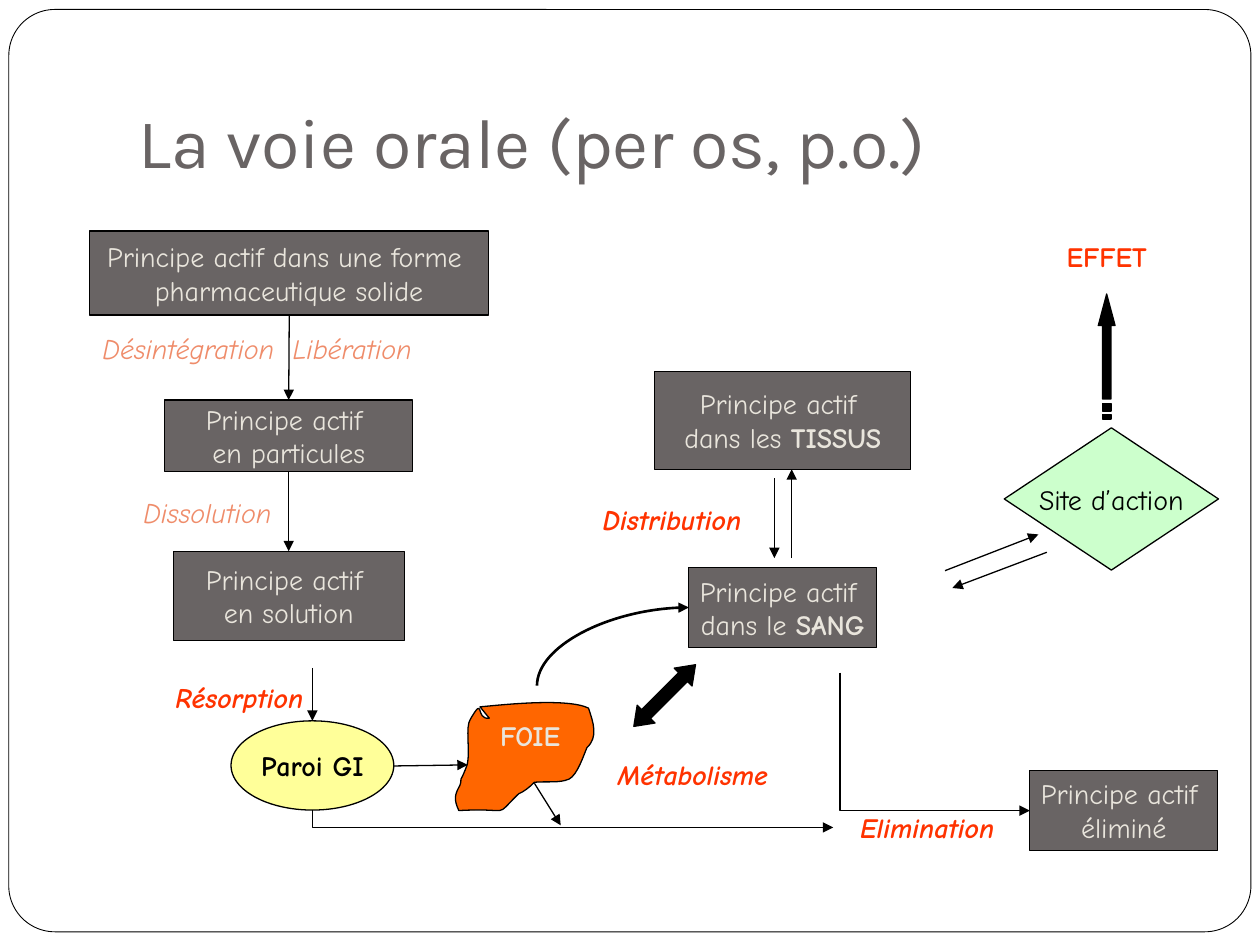
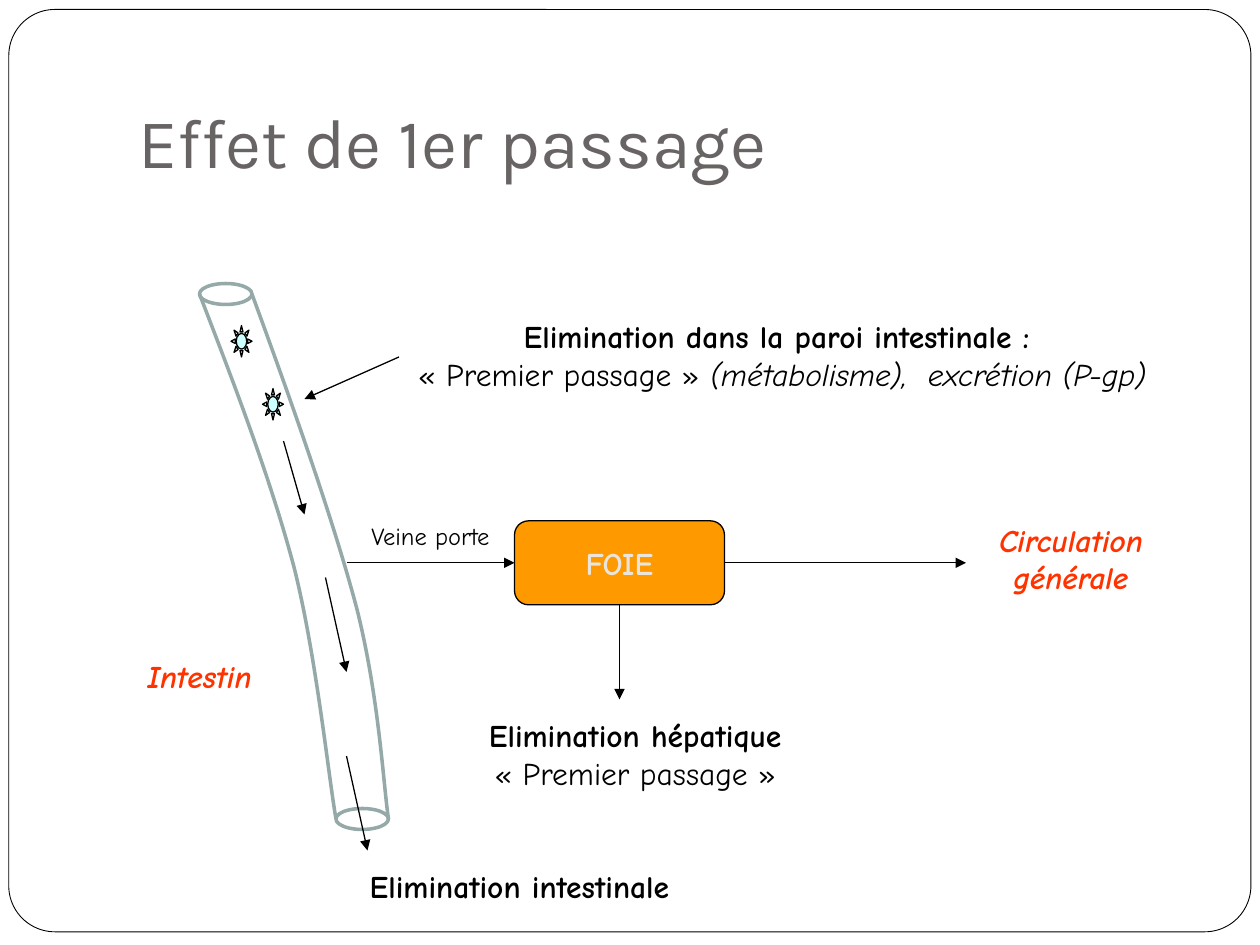
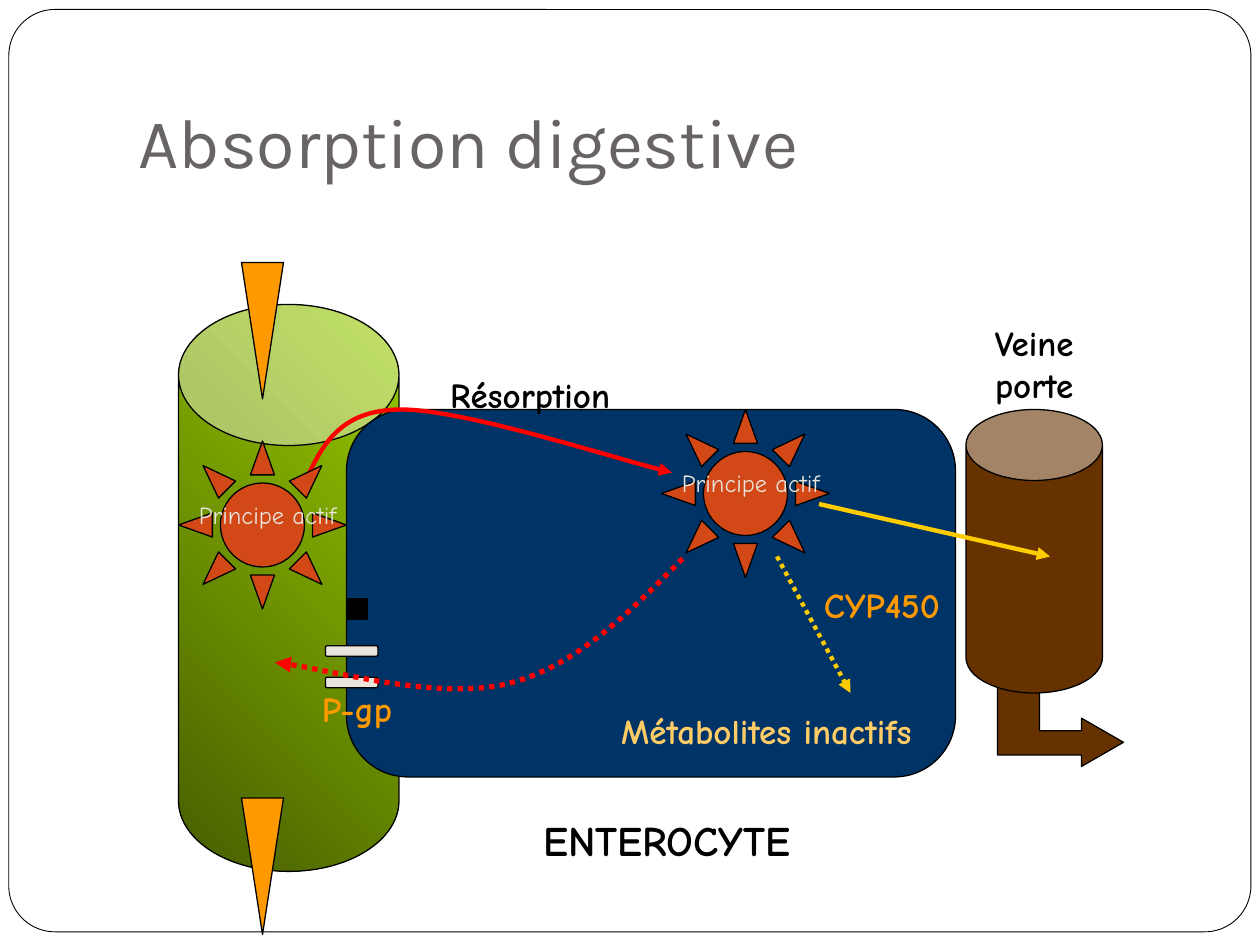
from dataclasses import dataclass

from lxml.etree import SubElement
from pptx import Presentation
from pptx.dml.color import RGBColor
from pptx.enum.dml import MSO_LINE as Dash
from pptx.enum.shapes import MSO_CONNECTOR as Link, MSO_SHAPE as Kind
from pptx.enum.text import MSO_ANCHOR as Anchor, PP_ALIGN as Align
from pptx.oxml.ns import qn
from pptx.util import Emu, Inches, Pt

COLUMNS, ROWS = 120, 90
CELL = Inches(10) // COLUMNS

TITLE_FONT, BODY_FONT = "Karla", "Comic Neue"
BLACK = RGBColor(0x00, 0x00, 0x00)
WHITE = RGBColor(0xFF, 0xFF, 0xFF)
GREY = RGBColor(0x69, 0x64, 0x64)
CREAM = RGBColor(0xE9, 0xE5, 0xDC)
SALMON = RGBColor(0xEF, 0x8C, 0x6A)
VERMILION = RGBColor(0xFF, 0x33, 0x00)
RED = RGBColor(0xFF, 0x00, 0x00)
ORANGE = RGBColor(0xFF, 0x99, 0x00)
LIVER = RGBColor(0xFF, 0x66, 0x00)
PALE_YELLOW = RGBColor(0xFF, 0xFF, 0x99)
PALE_GREEN = RGBColor(0xCC, 0xFF, 0xCC)
PALE_BLUE = RGBColor(0xCC, 0xFF, 0xFF)
WALL = RGBColor(0x96, 0xA9, 0xA9)
BROWN = RGBColor(0x66, 0x33, 0x00)
NAVY = RGBColor(0x00, 0x33, 0x66)
OLIVE = RGBColor(0x47, 0x5E, 0x00)
LIME = RGBColor(0x99, 0xCC, 0x00)
GOLD = RGBColor(0xFF, 0xCC, 0x00)
SAND = RGBColor(0xFF, 0xCC, 0x66)
RUST = RGBColor(0xD3, 0x48, 0x17)

STAGE = dict(bold=True, italic=True, color=VERMILION)


def cells(*counts):
    return [Emu(round(count * CELL)) for count in counts]


def write(frame, text, size=16, color=BLACK, bold=False, italic=False,
          font=BODY_FONT, align=Align.CENTER, spacing=None):
    """Text is one string or a list of (string, format changes) pairs."""
    para = frame.paragraphs[0]
    para.alignment = align
    para.line_spacing = spacing
    base = dict(bold=bold, italic=italic)
    for words, changes in [(text, {})] if isinstance(text, str) else text:
        for number, line in enumerate(words.split("\n")):
            if number:
                para.add_line_break()
            if line:
                span = para.add_run()
                span.text = line
                span.font.name, span.font.size = font, Pt(size)
                span.font.color.rgb = color
                for name, value in (base | changes).items():
                    setattr(span.font, name, value)


def stroke(shape, color=BLACK, width=0.75, dash=None, arrow=False):
    shape.line.color.rgb = color
    shape.line.width = Pt(width)
    if dash:
        shape.line.dash_style = dash
    if arrow:
        outline = shape.element.spPr.find(qn("a:ln"))
        SubElement(outline, qn("a:tailEnd"), type="triangle")


def paint(shape, fill):
    shape.shadow.inherit = False
    if fill is None:
        shape.fill.background()
    else:
        shape.fill.solid()
        shape.fill.fore_color.rgb = fill


def bend(shape):
    """Turn each three straight segments into one cubic curve."""
    segments = list(shape.element.iter(qn("a:lnTo")))
    for first, second, third in zip(*[iter(segments)] * 3):
        first.tag = qn("a:cubicBezTo")
        for segment in (second, third):
            first.append(segment[0])
            segment.getparent().remove(segment)


@dataclass
class Box:
    page: object
    left: float = 0
    top: float = 0

    def point(self, spot):
        return cells(self.left + spot[0], self.top + spot[1])

    def shape(self, kind, col, row, wide, high, fill=None, text=None,
              adjust=(), turn=0, line=None, **style):
        shape = self.page.shapes.add_shape(
            kind, *self.point((col, row)), *cells(wide, high))
        paint(shape, fill)
        stroke(shape, **(line or {}))
        for index, value in enumerate(adjust):
            shape.adjustments[index] = value
        shape.rotation = turn
        if text:
            frame = shape.text_frame
            frame.word_wrap = False
            frame.vertical_anchor = Anchor.MIDDLE
            write(frame, text, **style)
        return shape

    def label(self, text, col, row, wide, high=4.4, **style):
        frame = self.page.shapes.add_textbox(
            *self.point((col, row)), *cells(wide, high)).text_frame
        frame.word_wrap = True
        write(frame, text, **style)

    def connect(self, begin, end, **line):
        link = self.page.shapes.add_connector(Link.STRAIGHT, *begin, *end)
        stroke(link, arrow=True, **line)
        SubElement(link.element.spPr, qn("a:effectLst"))
        return link

    def arrow(self, begin, end, **line):
        self.connect(self.point(begin), self.point(end), **line)

    def corner(self, begin, end, preset="bentConnector2", **line):
        """A link that leaves upright and arrives level, to the right."""
        (x1, y1), (x2, y2) = self.point(begin), self.point(end)
        middle_x, middle_y = (x1 + x2) // 2, (y1 + y2) // 2
        half_x, half_y = (y1 - y2) // 2, (x2 - x1) // 2
        link = self.connect((middle_x - half_x, middle_y - half_y),
                            (middle_x + half_x, middle_y + half_y), **line)
        properties = link.element.spPr
        properties.find(qn("a:xfrm")).set("rot", "16200000")
        properties.find(qn("a:prstGeom")).set("prst", preset)

    def outline(self, contours, fill=None, close=True, **line):
        builder = None
        for contour in contours:
            start, *rest = [self.point(spot) for spot in contour]
            if builder is None:
                builder = self.page.shapes.build_freeform(*start)
            else:
                builder.move_to(*start)
            builder.add_line_segments(rest, close=close)
        shape = builder.convert_to_shape()
        paint(shape, fill)
        stroke(shape, **line)
        return shape

    def curve(self, points, fill=None, close=False, **line):
        bend(self.outline([points], fill, close, **line))


def prepare_layout(deck, layout):
    draft = deck.slides.add_slide(layout)
    frame = Box(draft).shape(Kind.ROUNDED_RECTANGLE, 0.84, 0.9, 118.3, 87.84,
                             WHITE, adjust=[0.05], line=dict(width=0.5))
    layout.shapes.element.insert(2, frame.element)
    title = layout.placeholders[0]
    title.left, title.top, title.width, title.height = cells(12, 3.6, 102, 15)
    return draft


def set_title(page, text):
    frame = page.shapes.title.text_frame
    frame.vertical_anchor = Anchor.BOTTOM
    frame.margin_bottom = Inches(0.1)
    write(frame, text, size=40, color=GREY, font=TITLE_FONT, align=Align.LEFT)


def drug_state(box, text, *place):
    box.shape(Kind.RECTANGLE, *place, GREY, text, color=CREAM)


def solid_form(box):
    drug_state(box, "Principe actif dans une forme \npharmaceutique solide",
               4.54, 0, 38, 8)
    drug_state(box, "Principe actif \nen particules", 11.7, 16.1, 23.6, 6.8)
    drug_state(box, "Principe actif \nen solution", 12.5, 30.5, 22, 8.5)
    box.arrow((23.55, 8), (23.5, 16.1))
    box.arrow((23.5, 22.9), (23.5, 30.5))
    box.label("Désintégration  Libération", 0, 9, 41, color=SALMON, italic=True)
    box.label("Dissolution", 6.8, 24.6, 17.9, color=SALMON, italic=True)


def gut_wall(box):
    box.label("Résorption", 0.05, 0.6, 17.9, **STAGE)
    box.shape(Kind.OVAL, 8.2, 5.05, 15.5, 8.5, PALE_YELLOW, "Paroi GI",
              bold=True)
    box.curve([
        (31.92, 3.72), (33.4, 3.6), (40.1, 2.8), (42.25, 3.84),
        (42.7, 5.2), (43.2, 6.6), (42.1, 7.6),
        (41.8, 8.3), (41.2, 10.2), (40.4, 10.6),
        (39.5, 11), (38.3, 10.8), (37.1, 10.9),
        (36.6, 11.4), (36.1, 11.8), (35.6, 12),
        (33.1, 14.4), (35.2, 13.3), (29.9, 13.6),
        (29.4, 12.5), (29.5, 12.1), (30, 11.2),
        (30.1, 11), (30.1, 10.8), (30.1, 10.6),
        (30.4, 10.1), (30.7, 9.2), (30.7, 9.2),
        (31, 7.9), (30.5, 5.6), (31, 4.9),
        (32.4, 2.5), (31.4, 5), (32.8, 4.8),
        (32.8, 4.8), (31.92, 3.72), (31.92, 3.72)], LIVER, close=True)
    box.label("FOIE", 31, 4.2, 11.4, color=CREAM, bold=True)
    box.arrow((15.95, 0), (15.95, 5.05))
    box.arrow((23.65, 9.35), (30.75, 9.25))
    box.corner((15.95, 13.55), (65.55, 15.2))
    box.arrow((37.1, 11), (39.6, 15))


def elimination(box):
    box.label("Elimination", 0.36, 12.6, 17.9, **STAGE)
    drug_state(box, "Principe actif \néliminé", 19.08, 9.36, 17.9, 7.65)
    box.corner((1, 0.05), (19.08, 13.2))


def action_site(box):
    box.shape(Kind.FLOWCHART_DECISION, 5.65, 18.75, 20.4, 13.55, PALE_GREEN,
              "Site d’action")
    box.arrow((0, 32.35), (8.9, 28.9))
    box.arrow((9.7, 30.6), (0.7, 34))
    left, right = 15, 15.8
    head = [(left, 16), (left, 9), (14.6, 9), (15.4, 6), (16.2, 9),
            (right, 9), (right, 16)]
    stripes = [[(left, top), (right, top), (right, bottom), (left, bottom)]
               for top, bottom in ((16.4, 17.15), (17.5, 17.9))]
    box.outline([head, *stripes], BLACK)
    box.label("EFFET", 6.45, 0.2, 17.9, color=VERMILION, bold=True)


def circulation(box):
    strong = dict(bold=True)
    drug_state(box, [("Principe actif \ndans les ", {}), ("TISSUS", strong)],
               11.35, 0.4, 24.4, 9.3)
    drug_state(box, [("Principe actif \ndans le ", {}), ("SANG", strong)],
               14.6, 19.05, 17.9, 7.65)
    box.label("Distribution", 4.05, 12.3, 17.9, **STAGE)
    box.arrow((22.75, 10.55), (22.75, 18.15))
    box.arrow((24.4, 18.15), (24.4, 9.7))
    box.corner((0.14, 30.3), (14.6, 22.85), "curvedConnector2", width=1.5)
    box.label("Métabolisme", 5.05, 36.6, 19.9, **STAGE)
    box.shape(Kind.LEFT_RIGHT_ARROW, 8.15, 30.05, 8.3, 2.4, BLACK,
              adjust=[0.5, 0.69], turn=315)


def intestine(box):
    wall = dict(color=WALL, width=2)
    for col, row in ((11, 0), (24, 50)):
        box.shape(Kind.FLOWCHART_CONNECTOR, col, row, 5, 2, line=wall)
    box.curve([(16, 1), (20, 11.9), (23.8, 22.7), (26, 31),
               (28.1, 39.4), (28.5, 47.6), (29, 51)], **wall)
    box.curve([(11, 1), (14.4, 9.8), (17.8, 18.7), (20, 27),
               (22.1, 35.3), (23.3, 47), (24, 51)], **wall)
    for col, row in ((14, 4), (17, 10)):
        box.shape(Kind.SUN, col, row, 2, 3, PALE_BLUE)
    for begin, end in (((19, 15), (21, 22)), ((23, 28), (25, 37)),
                       ((25, 45), (27, 54))):
        box.arrow(begin, end)
    box.label("Intestin", 0, 35, 22, 4.8, size=18, **STAGE)
    box.label("Elimination intestinale ", 19, 55, 46, 4.8, size=18, bold=True)


def hepatic_passage(box):
    box.shape(Kind.ROUNDED_RECTANGLE, 18, 0.6, 20, 8, ORANGE, "FOIE",
              size=18, color=CREAM, bold=True)
    box.arrow((2, 4.6), (18, 4.6))
    box.arrow((38, 4.6), (61, 4.6))
    box.arrow((28, 8.6), (28, 17.6))
    box.label("Circulation\ngénérale", 60, 0, 22, 8.4, size=18, **STAGE)
    box.label([("Elimination hépatique\n", dict(bold=True)),
               ("« Premier passage »", {})], 12, 18.6, 35, 8.4, size=18)
    box.label("Veine porte", 0, 0, 20, 4, size=14)


def wall_passage(box):
    box.label([("Elimination dans la paroi intestinale : \n", dict(bold=True)),
               ("« Premier passage » ", {}),
               ("(métabolisme),  excrétion (P-gp)", dict(italic=True))],
              4, 0.6, 83, 8.4, size=18)
    box.arrow((9, 5), (0, 9))


def portal_vein(box):
    box.outline([[(17, 40.7), (13, 38.4), (13, 39.6), (9, 39.6), (9, 35),
                  (5, 35), (5, 41.9), (13, 41.9), (13, 43)]], BROWN)
    box.shape(Kind.CAN, 2, 9, 13, 27, BROWN, adjust=[0.52])
    box.label("Veine\nporte", 0, 0, 17, 9.2, size=20, bold=True)


def lumen(box):
    tube = box.shape(Kind.CAN, 0, 4, 21, 54, LIME, adjust=[0.64])
    tube.fill.gradient()
    tube.fill.gradient_angle = 45
    for stop, color in zip(tube.fill.gradient_stops, (OLIVE, LIME)):
        stop.color.rgb = color
    for row in (0, 51):
        box.shape(Kind.ISOSCELES_TRIANGLE, 6, row, 4, 13, ORANGE, turn=180)


def enterocyte(box):
    box.shape(Kind.ROUNDED_RECTANGLE, 7, 4, 58, 35, NAVY)
    box.label("ENTEROCYTE", 21, 42, 33, 6, size=24, bold=True)
    box.curve([(3, 11), (4.6, 7.6), (6.2, 4.1), (12, 4),
               (17.8, 3.9), (33.6, 9), (38, 10)],
              color=RED, width=2.5, arrow=True)
    for row in (26.5, 29.5):
        box.shape(Kind.ROUNDED_RECTANGLE, 5, row, 5, 1, CREAM)
    box.shape(Kind.RECTANGLE, 7, 22, 2, 2, BLACK)
    box.curve([(39, 18.2), (34, 23.3), (28.8, 28.5), (22.4, 30.1),
               (15.9, 31.7), (3.9, 28.4), (0.2, 28.1)],
              color=RED, width=3, dash=Dash.ROUND_DOT, arrow=True)
    strong = dict(size=20, bold=True)
    box.label("P-gp ", 3, 30.8, 10, 4.2, color=ORANGE, spacing=0.75, **strong)
    box.label("Résorption", 10, 0, 29, 5.2, **strong)
    box.label("Métabolites inactifs", 28, 32, 38, 5.2, color=SAND, **strong)
    box.label("CYP450", 45, 20, 26, 5.2, color=ORANGE, **strong)
    box.arrow((48, 18), (55, 31), color=GOLD, width=2.5, dash=Dash.ROUND_DOT)
    box.arrow((52, 13), (74, 18), color=GOLD, width=2.5)


def active_drug(box):
    box.shape(Kind.SUN, 0, 0, 16, 16, RUST)
    box.label("Principe actif", 0, 5, 17, 6.8, size=14, color=CREAM)


PAGES = [
    ("La voie orale (per os, p.o.)",
     [(solid_form, 4, 22), (gut_wall, 13.8, 63.6), (elimination, 79, 64),
      (action_site, 90, 22), (circulation, 51, 35)]),
    ("Effet de 1er passage",
     [(intestine, 8, 27), (hepatic_passage, 31, 49), (wall_passage, 29, 29)]),
    ("Absorption digestive",
     [(portal_vein, 90, 30), (lumen, 17, 25), (enterocyte, 26, 35),
      (active_drug, 17, 42), (active_drug, 63, 39)]),
]


def main():
    deck = Presentation()
    deck.slide_width, deck.slide_height = cells(COLUMNS, ROWS)
    layout = deck.slide_layouts[5]
    page = prepare_layout(deck, layout)
    for number, (title, regions) in enumerate(PAGES):
        if number:
            page = deck.slides.add_slide(layout)
        set_title(page, title)
        for draw, left, top in regions:
            draw(Box(page, left, top))
    deck.save("out.pptx")


if __name__ == "__main__":
    main()
